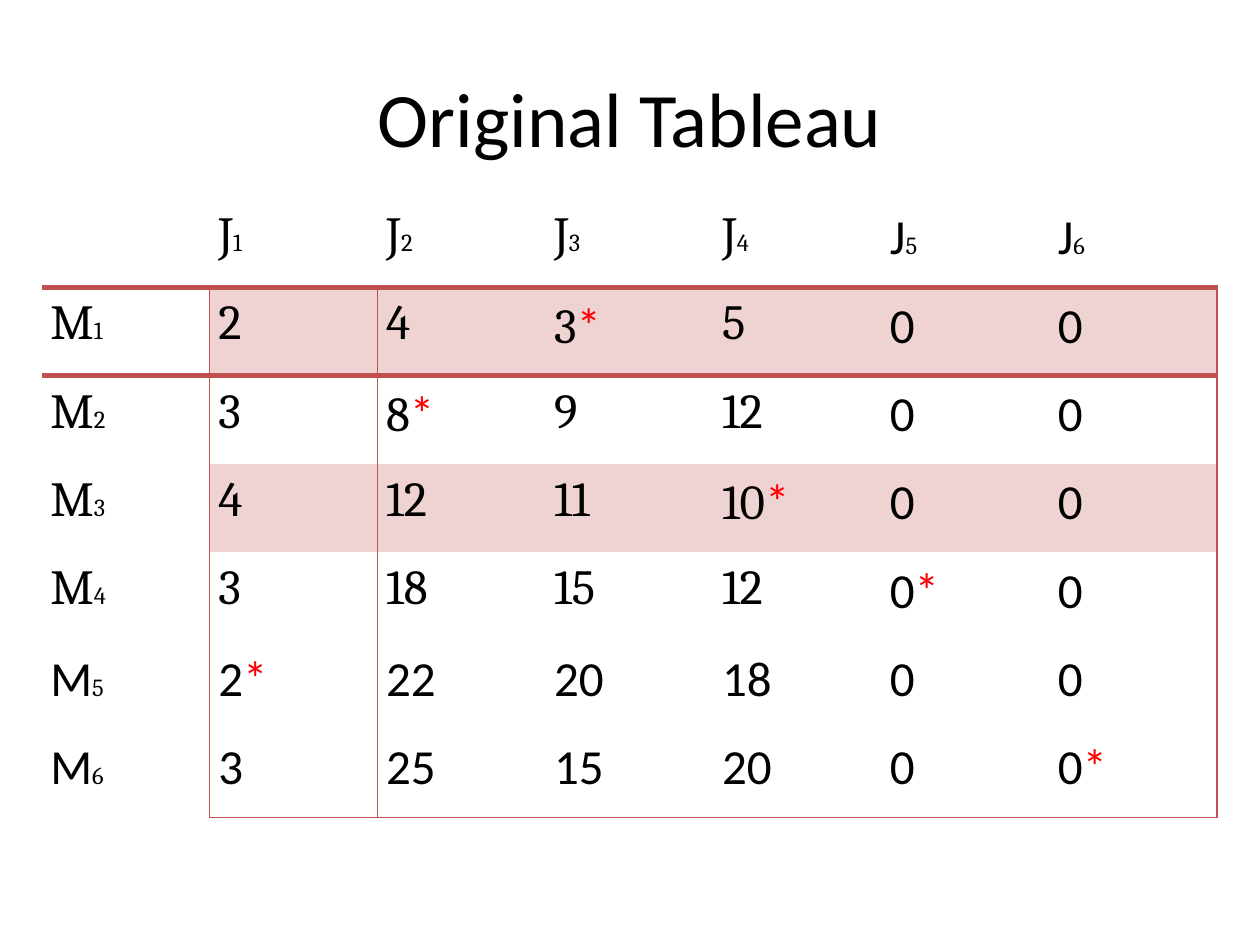
from dataclasses import dataclass

from lxml.etree import SubElement as Sub
from pptx import Presentation
from pptx.dml.color import RGBColor as RGB
from pptx.enum.text import MSO_ANCHOR as Anchor, PP_ALIGN as Align
from pptx.oxml.ns import qn
from pptx.util import Inches, Pt


@dataclass(frozen=True)
class Theme:
    sans: str = "Calibri"
    serif: str = "Cambria"
    ink: str = "000000"
    star: str = "FF0000"
    rule: str = "C0504D"
    band: str = "EFD3D2"
    paper: str = "FFFFFF"
    title: int = 44
    body: int = 28
    sub: int = 14


THEME = Theme()
PLAIN = "{2D5ABB26-0587-4C30-8999-92F81FD0307C}"  # no style, no grid
SIZE = 7
COSTS = [
    "2 4 3* 5 0 0",
    "3 8* 9 12 0 0",
    "4 12 11 10* 0 0",
    "3 18 15 12 0* 0",
    "2* 22 20 18 0 0",
    "3 25 15 20 0 0*",
]


def add_run(para, text, size, font, color=THEME.ink):
    run = para.add_run()
    run.text = text
    run.font.size = Pt(size)
    run.font.name = font
    run.font.color.rgb = RGB.from_string(color)


def add_title(slide, text):
    box = slide.shapes.add_textbox(Inches(0.5), Inches(0.3), Inches(9), Inches(1.25))
    frame = box.text_frame
    frame.word_wrap = True
    frame.vertical_anchor = Anchor.MIDDLE
    para = frame.paragraphs[0]
    para.alignment = Align.CENTER
    add_run(para, text, THEME.title, THEME.sans)


def add_edge(cell, side, width):
    line = Sub(cell._tc.get_or_add_tcPr(), qn(f"a:ln{side}"), w=str(Pt(width)))
    fill = Sub(line, qn("a:solidFill"))
    Sub(fill, qn("a:srgbClr"), val=THEME.rule)


def edges(row, col):
    """Widths of the rules round a cell, in the order the schema asks for."""
    last = SIZE - 1
    sides = {}
    if row and col == 1:
        sides["L"] = 1
    if row and col in (0, last):
        sides["R"] = 1
    if row == 1:
        sides["T"] = 3
    if row == 0:
        sides["B"] = 3
    elif row == last and col:
        sides["B"] = 1
    return sides


def fill_text(cell, text, font):
    """Write a label with a small index, or a cost with its star."""
    cell.margin_left = cell.margin_right = Inches(0.07)
    cell.margin_top = cell.margin_bottom = 0
    para = cell.text_frame.paragraphs[0]
    para.line_spacing = 1.15
    if text[0] in "JM":
        add_run(para, text[0], THEME.body, font)
        add_run(para, text[1:], THEME.sub, THEME.serif)
        return
    add_run(para, text.rstrip("*"), THEME.body, font)
    if text.endswith("*"):
        add_run(para, "*", THEME.body, THEME.sans, THEME.star)


def add_tableau(slide):
    shape = slide.shapes.add_table(
        SIZE, SIZE, Inches(0.33), Inches(1.58), Inches(9.33), Inches(4.91))
    table = shape.table
    table.first_row = table.horz_banding = False
    table._tbl.tblPr.find(qn("a:tableStyleId")).text = PLAIN
    rows = [[""] + [f"J{n}" for n in range(1, SIZE)]]
    rows += [[f"M{n}"] + costs.split() for n, costs in enumerate(COSTS, 1)]
    for r, texts in enumerate(rows):
        for c, text in enumerate(texts):
            cell = table.cell(r, c)
            if text:
                # The first four jobs and machines are set in serif
                font = THEME.serif if max(r, c) <= 4 else THEME.sans
                fill_text(cell, text, font)
            for side, width in edges(r, c).items():
                add_edge(cell, side, width)
            cell.fill.solid()
            band = c and r in (1, 3)
            cell.fill.fore_color.rgb = RGB.from_string(THEME.band if band else THEME.paper)


def main():
    deck = Presentation()
    deck.slide_width, deck.slide_height = Inches(10), Inches(7.5)
    slide = deck.slides.add_slide(deck.slide_layouts[6])
    add_title(slide, "Original Tableau")
    add_tableau(slide)
    deck.save("out.pptx")


if __name__ == "__main__":
    main()
